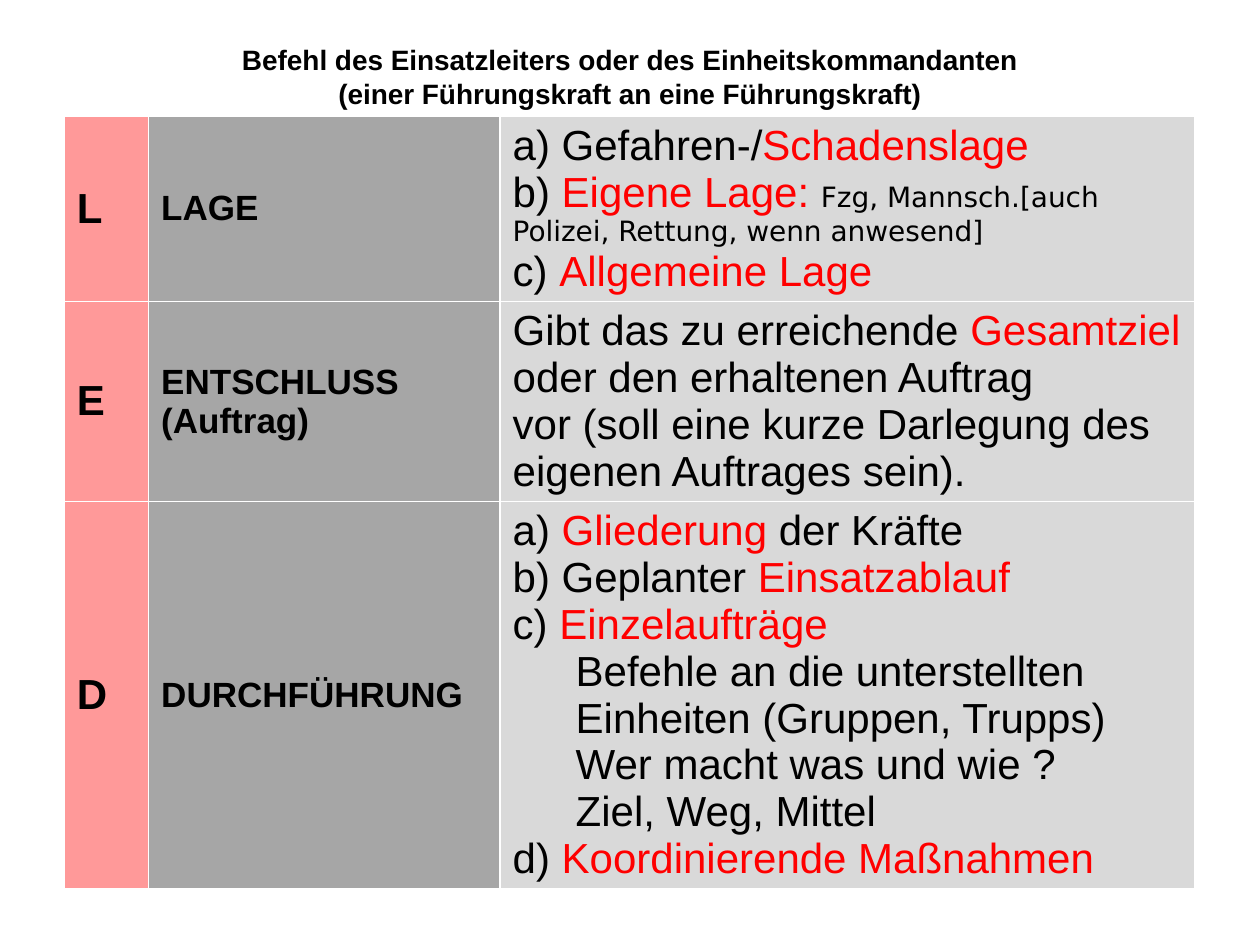
from lxml.etree import SubElement
from pptx import Presentation
from pptx.dml.color import RGBColor
from pptx.enum.shapes import MSO_SHAPE
from pptx.enum.text import MSO_ANCHOR, PP_ALIGN
from pptx.oxml.ns import qn
from pptx.util import Inches, Pt

BLACK = RGBColor(0x00, 0x00, 0x00)
WHITE = RGBColor(0xFF, 0xFF, 0xFF)
RED = RGBColor(0xFF, 0x00, 0x00)
PINK = RGBColor(0xFF, 0x99, 0x99)
DARK_GRAY = RGBColor(0xA6, 0xA6, 0xA6)
LIGHT_GRAY = RGBColor(0xD9, 0xD9, 0xD9)


def add_text(paragraph, text, size=24, bold=False, color=BLACK, font="Arial"):
    run = paragraph.add_run()
    run.text = text
    run.font.size = Pt(size)
    run.font.bold = bold
    run.font.color.rgb = color
    run.font.name = font


def format_cell(cell, fill):
    cell.fill.solid()
    cell.fill.fore_color.rgb = fill
    cell.vertical_anchor = MSO_ANCHOR.MIDDLE
    properties = cell._tc.get_or_add_tcPr()
    for position, side in enumerate(("a:lnL", "a:lnR", "a:lnT", "a:lnB")):
        line = SubElement(properties, qn(side), w=str(Pt(1)))
        line_fill = SubElement(line, qn("a:solidFill"))
        SubElement(line_fill, qn("a:srgbClr"), val=str(WHITE))
        properties.insert(position, line)


presentation = Presentation()
presentation.slide_width = Inches(10)
presentation.slide_height = Inches(7.5)
slide = presentation.slides.add_slide(presentation.slide_layouts[6])

title = slide.shapes.add_shape(
    MSO_SHAPE.RECTANGLE, Inches(0.51), Inches(0.29), Inches(8.98), Inches(0.71)
)
title.shadow.inherit = False
title.fill.solid()
title.fill.fore_color.rgb = WHITE
title.line.fill.background()
title_frame = title.text_frame
title_frame.word_wrap = True
title_frame.vertical_anchor = MSO_ANCHOR.TOP
title_lines = [
    "Befehl des Einsatzleiters oder des Einheitskommandanten",
    "(einer Führungskraft an eine Führungskraft)",
]
for index, text in enumerate(title_lines):
    paragraph = title_frame.add_paragraph() if index else title_frame.paragraphs[0]
    paragraph.alignment = PP_ALIGN.CENTER
    add_text(paragraph, text, size=16, bold=True)

red = {"color": RED}
small = {"size": 16, "font": "DejaVu Sans"}
sections = [
    ("L", "LAGE", 1.47, [
        (0, [("a) Gefahren-/", {}), ("Schadenslage", red)]),
        (0, [("b) ", {}), ("Eigene Lage: ", red),
             ("Fzg, Mannsch.[auch Polizei, Rettung, wenn anwesend]", small)]),
        (0, [("c) ", {}), ("Allgemeine Lage", red)]),
    ]),
    ("E", "ENTSCHLUSS (Auftrag)", 1.58, [
        (0, [("Gibt das zu erreichende ", {}), ("Gesamtziel", red),
             (" oder den erhaltenen Auftrag", {})]),
        (0, [("vor (soll eine kurze Darlegung des eigenen Auftrages sein).", {})]),
    ]),
    ("D", "DURCHFÜHRUNG", 3.07, [
        (0, [("a) ", {}), ("Gliederung", red), (" der Kräfte", {})]),
        (0, [("b) Geplanter ", {}), ("Einsatzablauf", red)]),
        (0, [("c) ", {}), ("Einzelaufträge", red)]),
        (1, [("Befehle an die unterstellten Einheiten (Gruppen, Trupps)", {})]),
        (1, [("Wer macht was und wie ?", {})]),
        (1, [("Ziel, Weg, Mittel", {})]),
        (0, [("d) ", {}), ("Koordinierende Maßnahmen", red)]),
    ]),
]

table = slide.shapes.add_table(
    3, 3, Inches(0.51), Inches(0.92), Inches(8.97), Inches(6.12)
).table
table.first_row = False
table.horz_banding = False
for column, width in zip(table.columns, (0.67, 2.79, 5.51)):
    column.width = Inches(width)

for row, (letter, heading, height, details) in zip(table.rows, sections):
    row.height = Inches(height)
    letter_cell, heading_cell, detail_cell = row.cells
    for cell, fill in zip(row.cells, (PINK, DARK_GRAY, LIGHT_GRAY)):
        format_cell(cell, fill)
    add_text(letter_cell.text_frame.paragraphs[0], letter, bold=True)
    add_text(heading_cell.text_frame.paragraphs[0], heading, size=20, bold=True)
    detail_frame = detail_cell.text_frame
    for index, (level, parts) in enumerate(details):
        paragraph = detail_frame.add_paragraph() if index else detail_frame.paragraphs[0]
        if level:
            paragraph.level = level
            properties = paragraph._p.get_or_add_pPr()
            properties.set("marL", str(Inches(0.5)))
            properties.set("indent", "0")
        for text, text_format in parts:
            add_text(paragraph, text, **text_format)

presentation.save("out.pptx")
